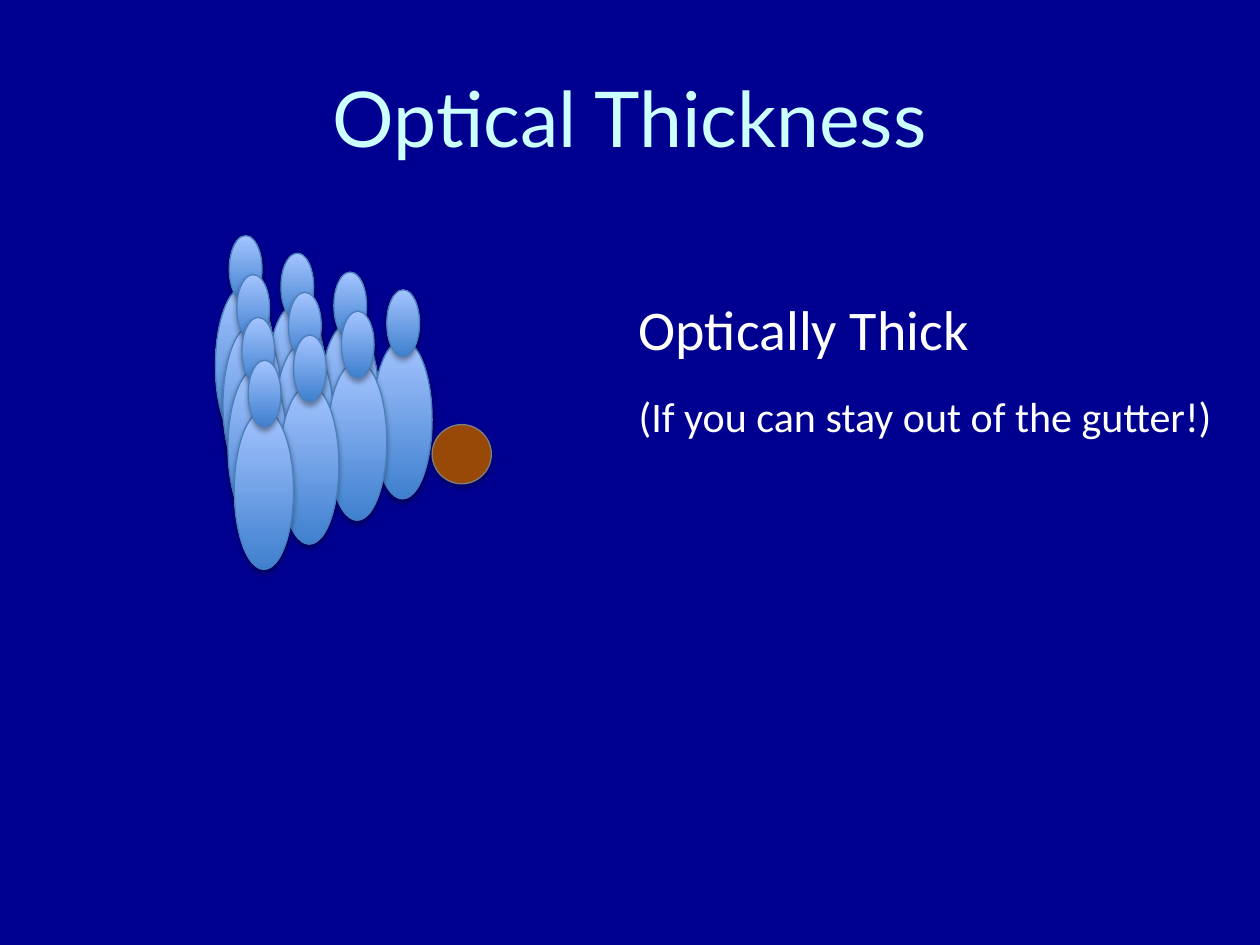
from dataclasses import dataclass

from lxml import etree
from pptx import Presentation
from pptx.dml.color import RGBColor
from pptx.enum.shapes import MSO_SHAPE
from pptx.enum.text import MSO_ANCHOR, MSO_AUTO_SIZE, PP_ALIGN
from pptx.oxml.ns import qn
from pptx.util import Inches, Pt

OVAL = MSO_SHAPE.OVAL
CENTER = PP_ALIGN.CENTER
MIDDLE = MSO_ANCHOR.MIDDLE


@dataclass(frozen=True)
class Theme:
    background: str = "000090"
    title: str = "CCFFFF"
    text: str = "FFFFFF"
    pin_fill: tuple = ("3F80CE", "A4C4FF")
    pin_line: str = "4B7EBC"
    ball_fill: str = "984807"
    ball_line: str = "808080"
    title_font: str = "Lato"
    text_font: str = "Calibri"
    title_size: int = 44
    heading_size: int = 32
    note_size: int = 24
    line_width: float = 0.75


THEME = Theme()

TITLE = ("Optical Thickness", (0.5, 0.3, 9, 1.25))
CAPTIONS = [
    ("Optically Thick", (4.97, 2.29, 2.85, 0.64), THEME.heading_size),
    ("(If you can stay out of the gutter!)", (4.97, 3.05, 4.8, 0.5), THEME.note_size),
]

# Pins stand in a triangle: each row, from back to front, has one pin fewer.
ROW_STARTS = [(1.71, 2.27), (1.77, 2.58), (1.81, 2.92), (1.86, 3.26)]
COLUMN_OFFSETS = [(0, 0), (0.41, 0.14), (0.83, 0.29), (1.25, 0.43)]
BODY_SIZE = (0.47, 1.26)
HEAD_SIZE = (0.26, 0.53)
HEAD_OFFSET = (0.11, -0.4)
BALL_BOX = (3.43, 3.37, 0.47, 0.47)


def rgb(value):
    return RGBColor.from_string(value)


def inches(box):
    return [Inches(v) for v in box]


def write(tf, text, *, font, size, color, align=None):
    p = tf.paragraphs[0]
    p.alignment = align
    r = p.add_run()
    r.text = text
    r.font.name = font
    r.font.size = Pt(size)
    r.font.color.rgb = rgb(color)


def add_shadow(sp):
    """Give the shape a soft shadow straight below it."""
    sp.shadow.inherit = False
    effects = sp._element.spPr.find(qn("a:effectLst"))
    shadow = etree.SubElement(
        effects, qn("a:outerShdw"), blurRad=str(Pt(3.1)), dist=str(Pt(1.8)),
        dir=str(90 * 60000), rotWithShape="0")
    color = etree.SubElement(shadow, qn("a:srgbClr"), val="000000")
    etree.SubElement(color, qn("a:alpha"), val="35000")


def add_oval(shapes, box, *, fill, line):
    """Draw an oval; a pair of fill colours runs from bottom to top."""
    sp = shapes.add_shape(OVAL, *inches(box))
    if isinstance(fill, tuple):
        sp.fill.gradient()
        sp.fill.gradient_angle = 90
        for stop, color, position in zip(sp.fill.gradient_stops, fill, (0, 1)):
            stop.color.rgb = rgb(color)
            stop.position = position
    else:
        sp.fill.solid()
        sp.fill.fore_color.rgb = rgb(fill)
    sp.line.color.rgb = rgb(line)
    sp.line.width = Pt(THEME.line_width)
    add_shadow(sp)


def add_pin(slide, x, y):
    pin = slide.shapes.add_group_shape()
    dx, dy = HEAD_OFFSET
    for box in ((x, y, *BODY_SIZE), (x + dx, y + dy, *HEAD_SIZE)):
        add_oval(pin.shapes, box, fill=THEME.pin_fill, line=THEME.pin_line)


def add_title(slide):
    text, box = TITLE
    title = slide.shapes.title
    title.left, title.top, title.width, title.height = inches(box)
    title.text_frame.vertical_anchor = MIDDLE
    write(title.text_frame, text, font=THEME.title_font, size=THEME.title_size,
          color=THEME.title, align=CENTER)


def add_caption(slide, text, box, size):
    tf = slide.shapes.add_textbox(*inches(box)).text_frame
    tf.word_wrap = False
    tf.auto_size = MSO_AUTO_SIZE.SHAPE_TO_FIT_TEXT
    write(tf, text, font=THEME.text_font, size=size, color=THEME.text)


def main():
    prs = Presentation()
    prs.slide_width, prs.slide_height = Inches(10), Inches(7.5)
    slide = prs.slides.add_slide(prs.slide_layouts.get_by_name("Title Only"))
    slide.background.fill.solid()
    slide.background.fill.fore_color.rgb = rgb(THEME.background)

    add_title(slide)
    for row, (x, y) in enumerate(ROW_STARTS):
        for dx, dy in COLUMN_OFFSETS[:len(ROW_STARTS) - row]:
            add_pin(slide, x + dx, y + dy)
    add_oval(slide.shapes, BALL_BOX, fill=THEME.ball_fill, line=THEME.ball_line)
    for text, box, size in CAPTIONS:
        add_caption(slide, text, box, size)

    prs.save("out.pptx")


if __name__ == "__main__":
    main()
